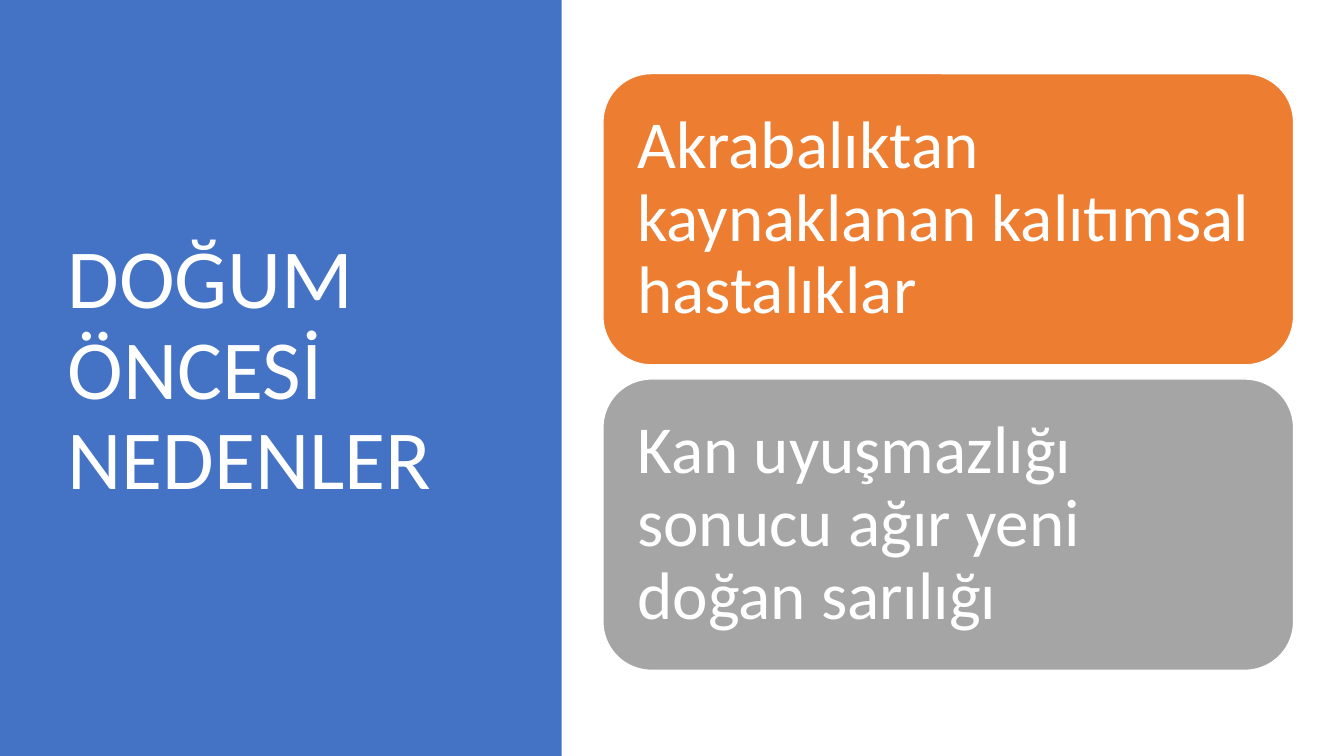
from pptx import Presentation
from pptx.dml.color import RGBColor
from pptx.enum.shapes import MSO_SHAPE
from pptx.enum.text import MSO_ANCHOR, MSO_AUTO_SIZE, PP_ALIGN
from pptx.util import Inches, Pt

RECTANGLE = MSO_SHAPE.RECTANGLE
ROUNDED = MSO_SHAPE.ROUNDED_RECTANGLE
MIDDLE = MSO_ANCHOR.MIDDLE
LEFT = PP_ALIGN.LEFT
NO_AUTOFIT = MSO_AUTO_SIZE.NONE
TITLE_ONLY = 5

COLORS = {
    "white": "FFFFFF",
    "blue": "4472C4",
    "orange": "ED7D31",
    "gray": "A5A5A5",
}


class PageBuilder:
    """Holds the style and the current slide."""

    font = "Calibri"
    line_spacing = 0.9

    def __init__(self, page):
        self.page = page

    def color(self, name):
        return RGBColor.from_string(COLORS[name])

    def set_text(self, frame, text, size, inset):
        frame.word_wrap = True
        frame.auto_size = NO_AUTOFIT
        frame.vertical_anchor = MIDDLE
        frame.margin_left = frame.margin_right = Inches(inset)
        frame.margin_top = frame.margin_bottom = Inches(inset)
        para = frame.paragraphs[0]
        para.alignment = LEFT
        para.line_spacing = self.line_spacing
        span = para.add_run()
        span.text = text
        span.font.name = self.font
        span.font.size = Pt(size)
        span.font.color.rgb = self.color("white")

    def shape(self, kind, bounds, fill):
        box = self.page.shapes.add_shape(kind, *map(Inches, bounds))
        box.shadow.inherit = False
        box.fill.solid()
        box.fill.fore_color.rgb = self.color(fill)
        return box

    def side_panel(self, bounds, fill):
        panel = self.shape(RECTANGLE, bounds, fill)
        panel.line.fill.background()
        # Place the panel behind the title
        self.page.shapes.title.element.addprevious(panel.element)

    def title(self, bounds, text):
        title = self.page.shapes.title
        title.left, title.top, title.width, title.height = map(Inches, bounds)
        self.set_text(title.text_frame, text, size=60, inset=0.1)

    def card(self, bounds, fill, text):
        card = self.shape(ROUNDED, bounds, fill)
        card.line.color.rgb = self.color("white")
        card.line.width = Pt(1)
        self.set_text(card.text_frame, text, size=48, inset=0.2)


def main():
    deck = Presentation()
    deck.slide_width = Inches(13.33)
    deck.slide_height = Inches(7.5)
    page = deck.slides.add_slide(deck.slide_layouts[TITLE_ONLY])
    builder = PageBuilder(page)

    # Title on the coloured side panel
    builder.side_panel((0, 0, 5.57, 7.5), "blue")
    builder.title((0.57, 0.68, 4.16, 6.02), "DOĞUM ÖNCESİ NEDENLER")

    # Stacked cause cards
    causes = [
        ("orange", "Akrabalıktan kaynaklanan kalıtımsal hastalıklar"),
        ("gray", "Kan uyuşmazlığı sonucu ağır yeni doğan sarılığı"),
    ]
    card_top, card_height, card_gap = 0.73, 2.89, 0.14
    for index, (fill, text) in enumerate(causes):
        top = card_top + index * (card_height + card_gap)
        builder.card((5.98, top, 6.85, card_height), fill, text)

    deck.save("out.pptx")


if __name__ == "__main__":
    main()
